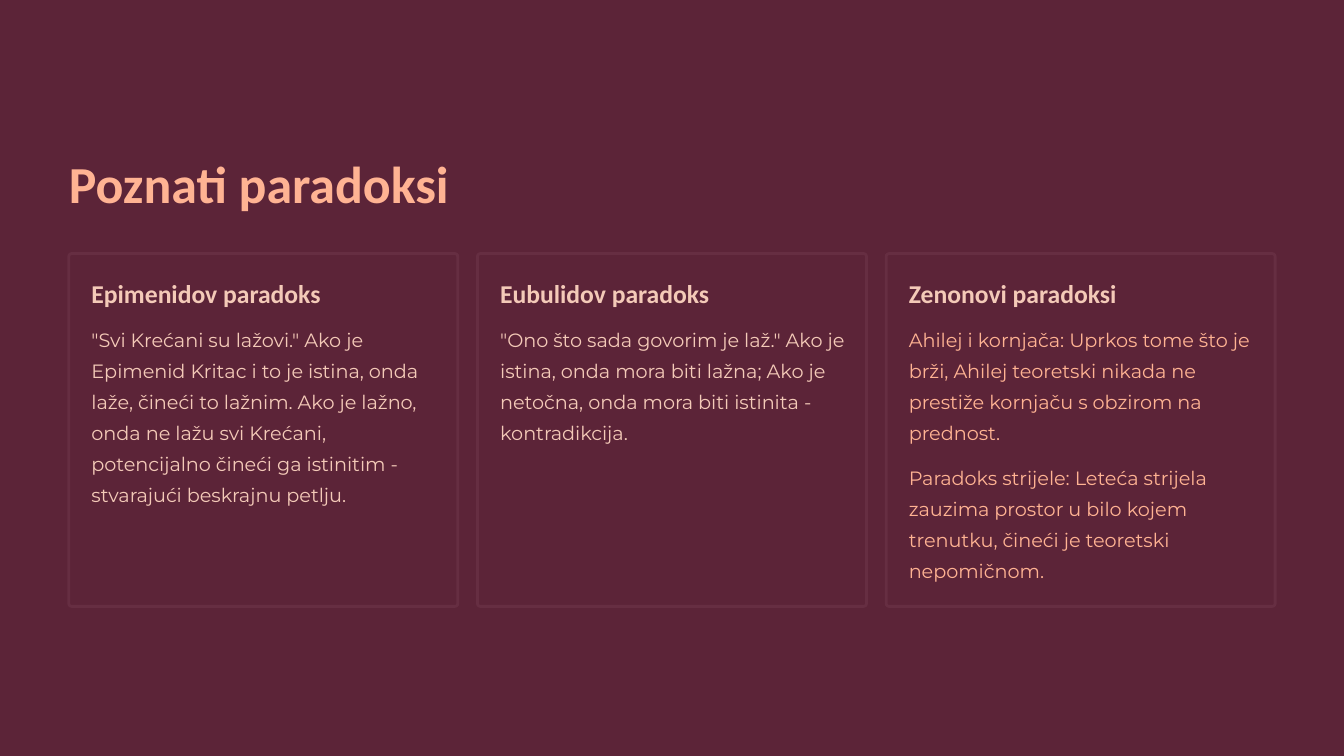
from pptx import Presentation
from pptx import util as u
from pptx.dml import color
from pptx.enum import shapes, text

HUES = {"wine": "5C2438", "edge": "662E42", "peach": "FFB393", "sand": "F4CAB8"}

CARDS = [
    ("Epimenidov paradoks", "sand", [
        '"Svi Krećani su lažovi." Ako je Epimenid Kritac i to je istina, onda laže, '
        "čineći to lažnim. Ako je lažno, onda ne lažu svi Krećani, potencijalno "
        "čineći ga istinitim - stvarajući beskrajnu petlju."]),
    ("Eubulidov paradoks", "sand", [
        '"Ono što sada govorim je laž." Ako je istina, onda mora biti lažna; Ako je '
        "netočna, onda mora biti istinita - kontradikcija."]),
    ("Zenonovi paradoksi", "peach", [
        "Ahilej i kornjača: Uprkos tome što je brži, Ahilej teoretski nikada ne "
        "prestiže kornjaču s obzirom na prednost.",
        "Paradoks strijele: Leteća strijela zauzima prostor u bilo kojem trenutku, "
        "čineći je teoretski nepomičnom."]),
]


class Deck:
    """Holds the style and the current slide, and draws its elements."""

    def __init__(self):
        self.prs = Presentation()
        self.prs.slide_width, self.prs.slide_height = u.Pt(1152), u.Pt(648)
        self.slide = self.prs.slides.add_slide(self.prs.slide_layouts[6])
        self.paint(self.slide.background.fill, "wine")

    def paint(self, fill, hue):
        fill.solid()
        fill.fore_color.rgb = color.RGBColor.from_string(HUES[hue])

    def panel(self, x, y, w, h):
        box = self.slide.shapes.add_shape(
            shapes.MSO_SHAPE.ROUNDED_RECTANGLE, *map(u.Pt, (x, y, w, h)))
        box.adjustments[0] = 0.008
        box.shadow.inherit = False
        self.paint(box.fill, "wine")
        self.paint(box.line.fill, "edge")
        box.line.width = u.Pt(2.4)

    def label(self, words, x, y, w, h, size, lead, hue, face="Calibri", bold=True, wrap=False):
        frame = self.slide.shapes.add_textbox(*map(u.Pt, (x, y, w, h))).text_frame
        frame.margin_left = frame.margin_top = 0
        frame.margin_right = frame.margin_bottom = 0
        frame.word_wrap = wrap
        frame.vertical_anchor = text.MSO_ANCHOR.TOP
        frame.text = words
        para = frame.paragraphs[0]
        para.line_spacing = u.Pt(lead)
        font = para.runs[0].font
        font.name, font.size, font.bold = face, u.Pt(size), bold
        self.paint(font.fill, hue)

    def body(self, words, x, y, w, h, hue):
        self.label(words, x, y, w, h, 16.5, 26.5, hue, "Montserrat", False, True)

    def card(self, x, y, w, h, head, hue, parts):
        pad = 19.4
        self.panel(x, y, w, h)
        self.label(head, x + pad, y + pad, 224.6, 28, 22, 28, "sand")
        for i, part in enumerate(parts):
            tall = 162 if len(part) > 150 else 108
            self.body(part, x + pad, y + 57.6 + i * 118.1, 295.2, tall, hue)


def main():
    deck = Deck()
    left, wide, gap = 59, 333.4, 16.9
    deck.label("Poznati paradoksi", left, 127.4, 449.3, 56, 44.5, 56, "peach")
    for i, (head, hue, parts) in enumerate(CARDS):
        deck.card(left + i * (wide + gap), 217.4, wide, 302.4, head, hue, parts)
    deck.prs.save("out.pptx")


if __name__ == "__main__":
    main()
